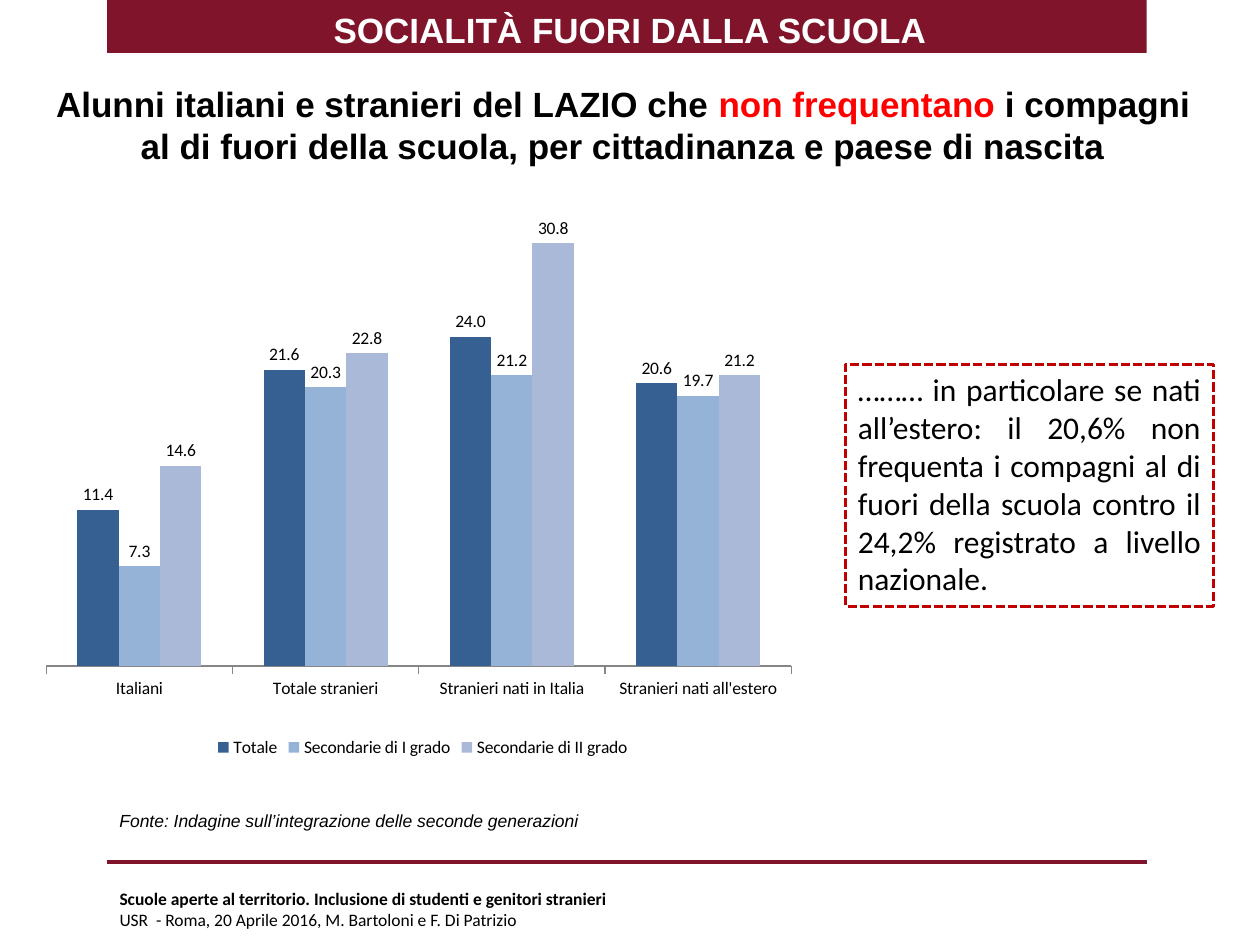
import pptx
import pptx.util
import pptx.dml.color
import pptx.chart.data
import pptx.enum.chart
import pptx.enum.dml
import pptx.enum.shapes
import pptx.enum.text
import pptx.oxml
import pptx.oxml.ns
from lxml import etree

BAND = "SOCIALITÀ FUORI DALLA SCUOLA"
TITLE = [
    [("Alunni italiani e stranieri del LAZIO che ", {}),
     ("non frequentano", {"color": "FF0000"}),
     (" i compagni", {})],
    [("al di fuori della scuola, per cittadinanza e paese di nascita", {})],
]
NOTE = ("……… in particolare se nati all’estero: il 20,6% non frequenta i compagni "
        "al di fuori della scuola contro il 24,2% registrato a livello nazionale.")
SOURCE = "Fonte: Indagine sull’integrazione delle seconde generazioni"
FOOT = [
    [("Scuole aperte al territorio. Inclusione di studenti e genitori stranieri",
      {"bold": True})],
    [("USR  - Roma, 20 Aprile 2016, M. Bartoloni e F. Di Patrizio", {})],
]
CATS = ["Italiani", "Totale stranieri", "Stranieri nati in Italia",
        "Stranieri nati all'estero"]
SERIES = [
    ("Totale", "376092", [11.4, 21.6, 24.0, 20.6]),
    ("Secondarie di I grado", "95B3D7", [7.3, 20.3, 21.2, 19.7]),
    ("Secondarie di II grado", "AAB9D7", [14.6, 22.8, 30.8, 21.2]),
]
PLOT = {"x": 0.022, "y": 0.016, "w": 0.946, "h": 0.82}
WINE, RED, BLACK, WHITE = "7F142A", "C00000", "000000", "FFFFFF"
WIDE, HIGH = 10, 7.5
LEFT, SPAN = 0.85, 8.25
RULE = 6.84

Inches, Pt = pptx.util.Inches, pptx.util.Pt
Align = pptx.enum.text.PP_ALIGN
Anchor = pptx.enum.text.MSO_ANCHOR
Kind = pptx.enum.shapes


def rgb(code):
    return pptx.dml.color.RGBColor.from_string(code)


def box(*sizes):
    return [Inches(size) for size in sizes]


def style(font, name, size, color=BLACK, bold=False, italic=False):
    font.name, font.size = name, Pt(size)
    font.bold, font.italic = bold, italic
    font.color.rgb = rgb(color)


def write(frame, lines, name, size, align=Align.LEFT, anchor=Anchor.TOP, **look):
    frame.word_wrap = True
    frame.vertical_anchor = anchor
    para = frame.paragraphs[0]
    para.alignment = align
    if isinstance(lines, str):
        para.text = lines
        style(para.font, name, size, **look)
        return
    for row, line in enumerate(lines):
        if row:
            para.add_line_break()
        for text, extra in line:
            run = para.add_run()
            run.text = text
            style(run.font, name, size, **{**look, **extra})


def plain(shape):
    shape.shadow.inherit = False
    return shape


def draw_chart(shapes):
    data = pptx.chart.data.CategoryChartData(number_format="#,##0.0")
    data.categories = CATS
    for name, color, vals in SERIES:
        data.add_series(name, vals)
    enum = pptx.enum.chart
    chart = shapes.add_chart(enum.XL_CHART_TYPE.COLUMN_CLUSTERED,
                             *box(0.23, 1.4, 6.25, 4.65), data).chart
    style(chart.font, "Calibri", 10)
    chart.has_title = False
    chart.has_legend = True
    chart.legend.position = enum.XL_LEGEND_POSITION.BOTTOM
    chart.legend.include_in_layout = False

    axis = chart.value_axis
    axis.visible = False
    axis.has_major_gridlines = False
    axis.minimum_scale, axis.maximum_scale = 0, 35
    axis = chart.category_axis
    axis.major_tick_mark = enum.XL_TICK_MARK.OUTSIDE
    axis.format.line.color.rgb = rgb("868686")

    plot = chart.plots[0]
    plot.gap_width, plot.overlap = 150, 0
    plot.vary_by_categories = False
    for series, (name, color, vals) in zip(plot.series, SERIES):
        series.format.fill.solid()
        series.format.fill.fore_color.rgb = rgb(color)
        labels = series.data_labels
        labels.show_value = True
        labels.number_format = "#,##0.0"
        labels.number_format_is_linked = False
        labels.position = enum.XL_LABEL_POSITION.OUTSIDE_END

    area = chart._chartSpace.chart.plotArea
    for old in area.findall(pptx.oxml.ns.qn("c:layout")):
        area.remove(old)
    parts = [("layoutTarget", "inner"), ("xMode", "edge"), ("yMode", "edge")]
    parts += PLOT.items()
    inner = "".join(f'<c:{tag} val="{val}"/>' for tag, val in parts)
    area.insert(0, pptx.oxml.parse_xml(
        f'<c:layout {pptx.oxml.ns.nsdecls("c")}>'
        f'<c:manualLayout>{inner}</c:manualLayout></c:layout>'))


def main():
    deck = pptx.Presentation()
    deck.slide_width, deck.slide_height = box(WIDE, HIGH)
    slide = deck.slides.add_slide(deck.slide_layouts[5])
    shapes = slide.shapes

    title = shapes.title
    title.left, title.top, title.width, title.height = box(0, 0.47, 9.89, 1.03)
    write(title.text_frame, TITLE, "Arial", 20, Align.CENTER, Anchor.MIDDLE, bold=True)

    band = plain(shapes.add_shape(Kind.MSO_SHAPE.RECTANGLE, *box(LEFT, 0, SPAN, 0.42)))
    band.fill.solid()
    band.fill.fore_color.rgb = rgb(WINE)
    band.line.fill.background()

    rule = shapes.add_connector(Kind.MSO_CONNECTOR.STRAIGHT,
                                *box(LEFT, RULE, LEFT + SPAN, RULE))
    rule.line.color.rgb, rule.line.width = rgb(WINE), Pt(2)
    etree.SubElement(rule._element.spPr, pptx.oxml.ns.qn("a:effectLst"))

    head = shapes.add_textbox(*box(0, 0, WIDE, 0.47))
    write(head.text_frame, BAND, "Arial", 20, Align.CENTER, Anchor.MIDDLE,
          color=WHITE, bold=True)
    cite = shapes.add_textbox(*box(LEFT, 6.38, 5, 0.27))
    write(cite.text_frame, SOURCE, "Arial", 10, italic=True)

    draw_chart(shapes)

    note = plain(shapes.add_shape(Kind.MSO_SHAPE.RECTANGLE, *box(6.71, 2.89, 2.92, 1.92)))
    note.fill.background()
    note.line.color.rgb, note.line.width = rgb(RED), Pt(1.75)
    note.line.dash_style = pptx.enum.dml.MSO_LINE.SQUARE_DOT
    write(note.text_frame, NOTE, "Calibri", 18, Align.JUSTIFY)

    foot = shapes.add_textbox(*box(LEFT, 7, WIDE - LEFT, 0.44))
    write(foot.text_frame, FOOT, "Calibri", 10)

    deck.save("out.pptx")


if __name__ == "__main__":
    main()
